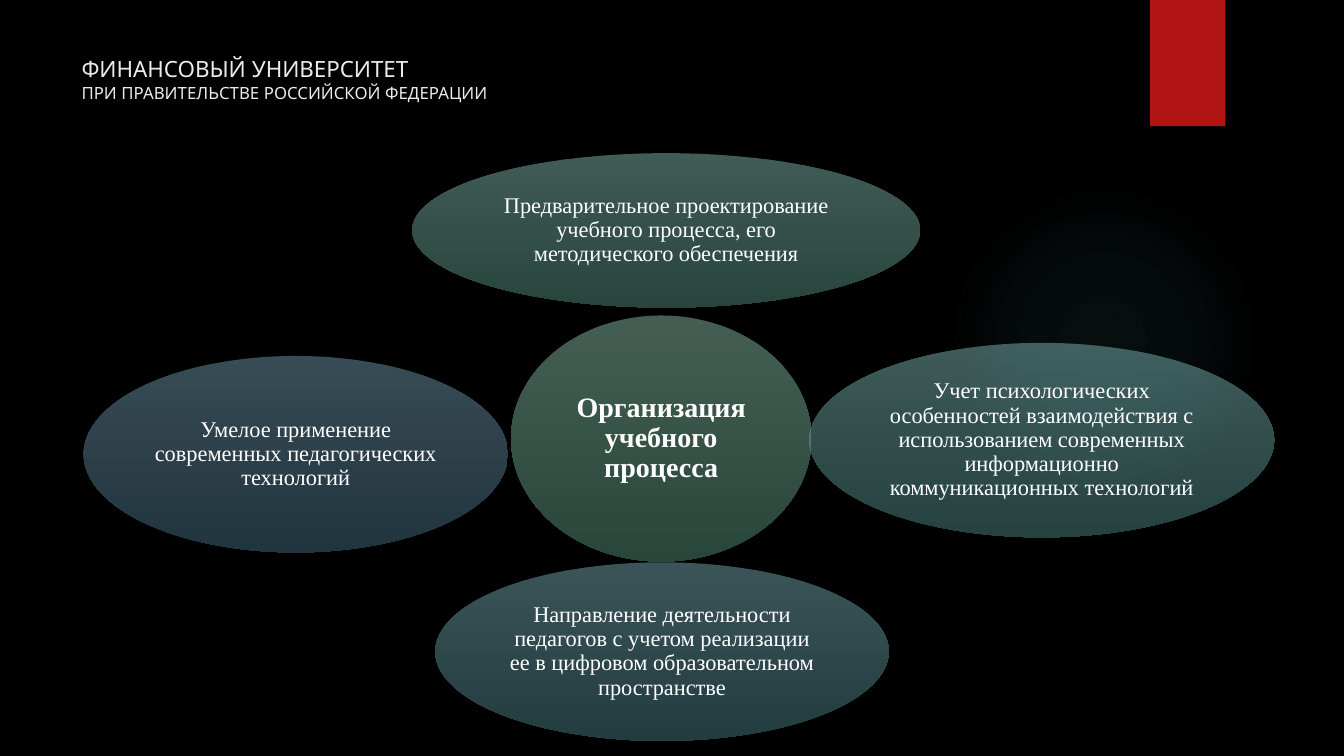
from copy import deepcopy

from pptx import Presentation
from pptx.dml.color import RGBColor
from pptx.enum.shapes import MSO_SHAPE as Shape
from pptx.enum.text import MSO_ANCHOR as Anchor, MSO_AUTO_SIZE as Fit, PP_ALIGN as Align
from pptx.oxml import parse_xml
from pptx.oxml.ns import nsdecls, qn
from pptx.util import Cm, Pt

BLACK = RGBColor(0x00, 0x00, 0x00)
WHITE = RGBColor(0xFF, 0xFF, 0xFF)
PALE = RGBColor(0xEB, 0xEB, 0xEB)
RED = RGBColor(0xB0, 0x15, 0x13)
GLOW = RGBColor(0x50, 0xB9, 0xC1)

DOWN = '<a:lin ang="5400000" scaled="0"/>'
ROUND = ('<a:path path="circle"><a:fillToRect l="50000" t="50000" '
         'r="50000" b="50000"/></a:path>')

# Text, box in cm (left, top, width, height), upper and lower colour
CORE = ("Организация учебного процесса", (12.88, 7.95, 7.57, 6.2),
        RGBColor(0x89, 0xBD, 0xA7), RGBColor(0x53, 0x8C, 0x74))
PETALS = [
    ("Предварительное проектирование учебного процесса, его методического обеспечения",
     (10.39, 3.86, 12.8, 3.89),
     RGBColor(0x83, 0xB9, 0xAC), RGBColor(0x4F, 0x88, 0x7A)),
    ("Учет психологических особенностей взаимодействия с использованием "
     "современных информационно коммуникационных технологий",
     (20.4, 8.64, 11.71, 4.9),
     RGBColor(0x7C, 0xB5, 0xB2), RGBColor(0x4A, 0x85, 0x82)),
    ("Направление деятельности педагогов с учетом реализации ее в цифровом "
     "образовательном пространстве",
     (10.97, 14.17, 11.43, 4.5),
     RGBColor(0x76, 0xA8, 0xB0), RGBColor(0x46, 0x79, 0x81)),
    ("Умелое применение современных педагогических технологий",
     (2.11, 8.97, 10.69, 4.95),
     RGBColor(0x71, 0x98, 0xAB), RGBColor(0x43, 0x6A, 0x7C)),
]


class Deck:
    head = "Quicksand"
    body = "Times New Roman"

    def __init__(self):
        self.prs = Presentation()
        self.prs.slide_width, self.prs.slide_height = Cm(33.87), Cm(19.05)
        self.slide = self.prs.slides.add_slide(self.prs.slide_layouts[5])
        fill = self.slide.background.fill
        fill.solid()
        fill.fore_color.rgb = BLACK

    def shape(self, kind, box):
        item = self.slide.shapes.add_shape(kind, *map(Cm, box))
        item.shadow.inherit = False
        item.line.fill.background()
        return item

    def block(self, box, color):
        item = self.shape(Shape.RECTANGLE, box)
        item.fill.solid()
        item.fill.fore_color.rgb = color

    def blend(self, box, stops, way):
        """Add an ellipse whose stops are (place %, colour, opacity %)."""
        item = self.shape(Shape.OVAL, box)
        marks = "".join(
            f'<a:gs pos="{pos * 1000}"><a:srgbClr val="{color}">'
            f'<a:alpha val="{alpha * 1000}"/></a:srgbClr></a:gs>'
            for pos, color, alpha in stops)
        item.fill.background()
        props = item.element.spPr
        props.replace(props.find(qn("a:noFill")), parse_xml(
            f'<a:gradFill {nsdecls("a")} rotWithShape="1">'
            f'<a:gsLst>{marks}</a:gsLst>{way}</a:gradFill>'))
        return item

    def style(self, run, face, size, color, bold=False):
        font = run.font
        font.name, font.size, font.bold = face, Pt(size), bold
        font.color.rgb = color

    def title(self, text, box, sizes):
        item = self.slide.shapes.title
        item.left, item.top, item.width, item.height = map(Cm, box)
        frame = item.text_frame
        frame.text = text
        frame.auto_size = Fit.NONE
        frame.vertical_anchor = Anchor.TOP
        para = frame.paragraphs[0]
        para.alignment = Align.LEFT
        for run, size in zip(para.runs, sizes):
            self.style(run, self.head, size, PALE)
        # The line break takes the size of the first line
        gap = para._p.find(qn("a:br"))
        gap.append(deepcopy(para.runs[0]._r.rPr))

    def bubble(self, text, box, upper, lower, size=16, bold=False):
        item = self.blend(box, [(0, upper, 50), (100, lower, 50)], DOWN)
        frame = item.text_frame
        frame.text = text
        frame.word_wrap = True
        frame.vertical_anchor = Anchor.MIDDLE
        frame.margin_left = frame.margin_right = Cm(0.05)
        frame.margin_top = frame.margin_bottom = Cm(0.05)
        para = frame.paragraphs[0]
        para.alignment = Align.CENTER
        para.line_spacing = 0.9
        self.style(para.runs[0], self.body, size, WHITE, bold)


def main():
    deck = Deck()
    deck.blend((23.9, 4.65, 7.82, 7.82),
               [(0, GLOW, 7), (36, GLOW, 6), (69, GLOW, 0), (100, GLOW, 0)], ROUND)
    deck.block((28.98, 0, 1.9, 3.18), RED)
    deck.title("ФИНАНСОВЫЙ УНИВЕРСИТЕТ\vПРИ ПРАВИТЕЛЬСТВЕ РОССИЙСКОЙ ФЕДЕРАЦИИ",
               (1.8, 1.27, 15.14, 2.08), (16, 12))
    deck.bubble(*CORE, size=20, bold=True)
    for petal in PETALS:
        deck.bubble(*petal)
    deck.prs.save("out.pptx")


if __name__ == "__main__":
    main()
